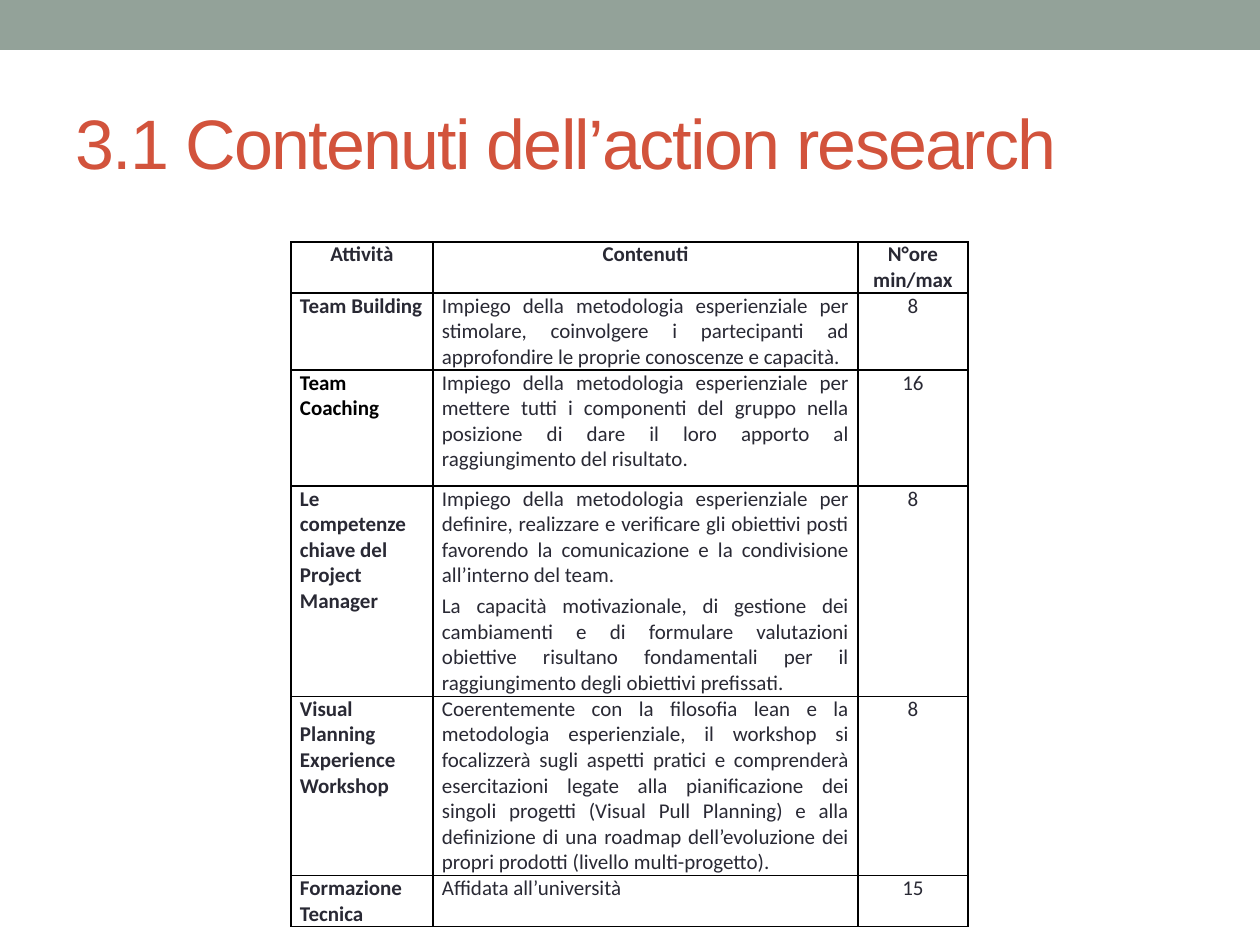
import pptx
import pptx.util
import pptx.dml.color
import pptx.enum.shapes
import pptx.enum.text
import pptx.oxml
import pptx.oxml.ns

Align = pptx.enum.text.PP_ALIGN
Color = pptx.dml.color.RGBColor

SAGE = Color(0x93, 0xA2, 0x99)
RUST = Color(0xD2, 0x53, 0x3C)
INK = Color(0x29, 0x29, 0x34)
BLACK = Color(0, 0, 0)

TITLE = "3.1 Contenuti dell’action research"
HEADERS = ["Attività", "Contenuti", "N°ore min/max"]
ACTIVITIES = [
    ("Team Building", [
        "Impiego della metodologia esperienziale per stimolare, coinvolgere i partecipanti ad "
        "approfondire le proprie conoscenze e capacità."], "8"),
    ("Team Coaching", [
        "Impiego della metodologia esperienziale per mettere tutti i componenti del gruppo nella "
        "posizione di dare il loro apporto al raggiungimento del risultato."], "16"),
    ("Le competenze chiave del Project Manager", [
        "Impiego della metodologia esperienziale per definire, realizzare e verificare gli obiettivi "
        "posti favorendo la comunicazione e la condivisione all’interno del team.",
        "La capacità motivazionale, di gestione dei cambiamenti e di formulare valutazioni obiettive "
        "risultano fondamentali per il raggiungimento degli obiettivi prefissati."], "8"),
    ("Visual Planning Experience Workshop", [
        "Coerentemente con la filosofia lean e la metodologia esperienziale, il workshop si "
        "focalizzerà sugli aspetti pratici e comprenderà esercitazioni legate alla pianificazione "
        "dei singoli progetti (Visual Pull Planning) e alla definizione di una roadmap "
        "dell’evoluzione dei propri prodotti (livello multi-progetto)."], "8"),
    ("Formazione Tecnica", ["Affidata all’università"], "15"),
]
BLACK_ACTIVITY = "Team Coaching"

SLIDE_SIZE = (1260, 945)
BAND_HEIGHT = 50
TITLE_BOX = (63, 73, 1134, 136)
TABLE_ORIGIN = (291, 242)
COLUMN_WIDTHS = [142, 425, 110]
ROW_HEIGHTS = [51, 77, 116, 210, 179, 51]
CELL_MARGIN = 9


def px(length):
    return pptx.util.Emu(round(length * 914400 / 126))


def write(frame, paragraphs, size=12, font="Calibri", color=INK, bold=False,
          align=Align.LEFT, after=0, spacing=None):
    for index, text in enumerate(paragraphs):
        para = frame.paragraphs[0] if index == 0 else frame.add_paragraph()
        para.alignment = align
        para.space_before = pptx.util.Pt(0)
        para.space_after = pptx.util.Pt(after)
        span = para.add_run()
        span.text = text
        span.font.size = pptx.util.Pt(size)
        span.font.name = font
        span.font.bold = bold
        span.font.color.rgb = color
        if spacing is not None:
            span.font._element.set("spc", str(spacing * 100))


def add_borders(cell):
    properties = cell._tc.get_or_add_tcPr()
    for position, side in enumerate(("lnL", "lnR", "lnT", "lnB")):
        line = pptx.oxml.parse_xml(
            f'<a:{side} {pptx.oxml.ns.nsdecls("a")} w="12700">'
            f'<a:solidFill><a:srgbClr val="{BLACK}"/></a:solidFill></a:{side}>')
        properties.insert(position, line)


def add_band(page):
    band = page.shapes.add_shape(
        pptx.enum.shapes.MSO_SHAPE.RECTANGLE, 0, 0, px(SLIDE_SIZE[0]), px(BAND_HEIGHT))
    band.shadow.inherit = False
    band.fill.solid()
    band.fill.fore_color.rgb = SAGE
    band.line.fill.background()


def add_title(page):
    title = page.shapes.title
    title.left, title.top, title.width, title.height = map(px, TITLE_BOX)
    title.text_frame.vertical_anchor = pptx.enum.text.MSO_ANCHOR.MIDDLE
    title.text_frame.auto_size = pptx.enum.text.MSO_AUTO_SIZE.NONE
    write(title.text_frame, [TITLE], size=40, font="Arial", color=RUST, spacing=-1)


def add_activity_table(page):
    box = page.shapes.add_table(
        len(ROW_HEIGHTS), len(COLUMN_WIDTHS), *map(px, TABLE_ORIGIN),
        px(sum(COLUMN_WIDTHS)), px(sum(ROW_HEIGHTS)))
    table = box.table
    table.first_row = table.horz_banding = False
    for column, width in zip(table.columns, COLUMN_WIDTHS):
        column.width = px(width)
    for row, height in zip(table.rows, ROW_HEIGHTS):
        row.height = px(height)

    for cell in table.iter_cells():
        cell.margin_left = cell.margin_right = px(CELL_MARGIN)
        cell.margin_top = cell.margin_bottom = 0
        cell.fill.background()
        add_borders(cell)

    for column, header in enumerate(HEADERS):
        write(table.cell(0, column).text_frame, [header], bold=True, align=Align.CENTER)
    for row, (activity, contents, hours) in enumerate(ACTIVITIES, start=1):
        name, description, duration = (cell.text_frame for cell in table.rows[row].cells)
        write(name, [activity], bold=True, color=BLACK if activity == BLACK_ACTIVITY else INK)
        write(description, contents, align=Align.JUSTIFY, after=3)
        write(duration, [hours], align=Align.CENTER)


def main():
    deck = pptx.Presentation()
    deck.slide_width, deck.slide_height = map(px, SLIDE_SIZE)
    page = deck.slides.add_slide(deck.slide_layouts.get_by_name("Title Only"))
    add_band(page)
    add_title(page)
    add_activity_table(page)
    deck.save("out.pptx")


if __name__ == "__main__":
    main()
